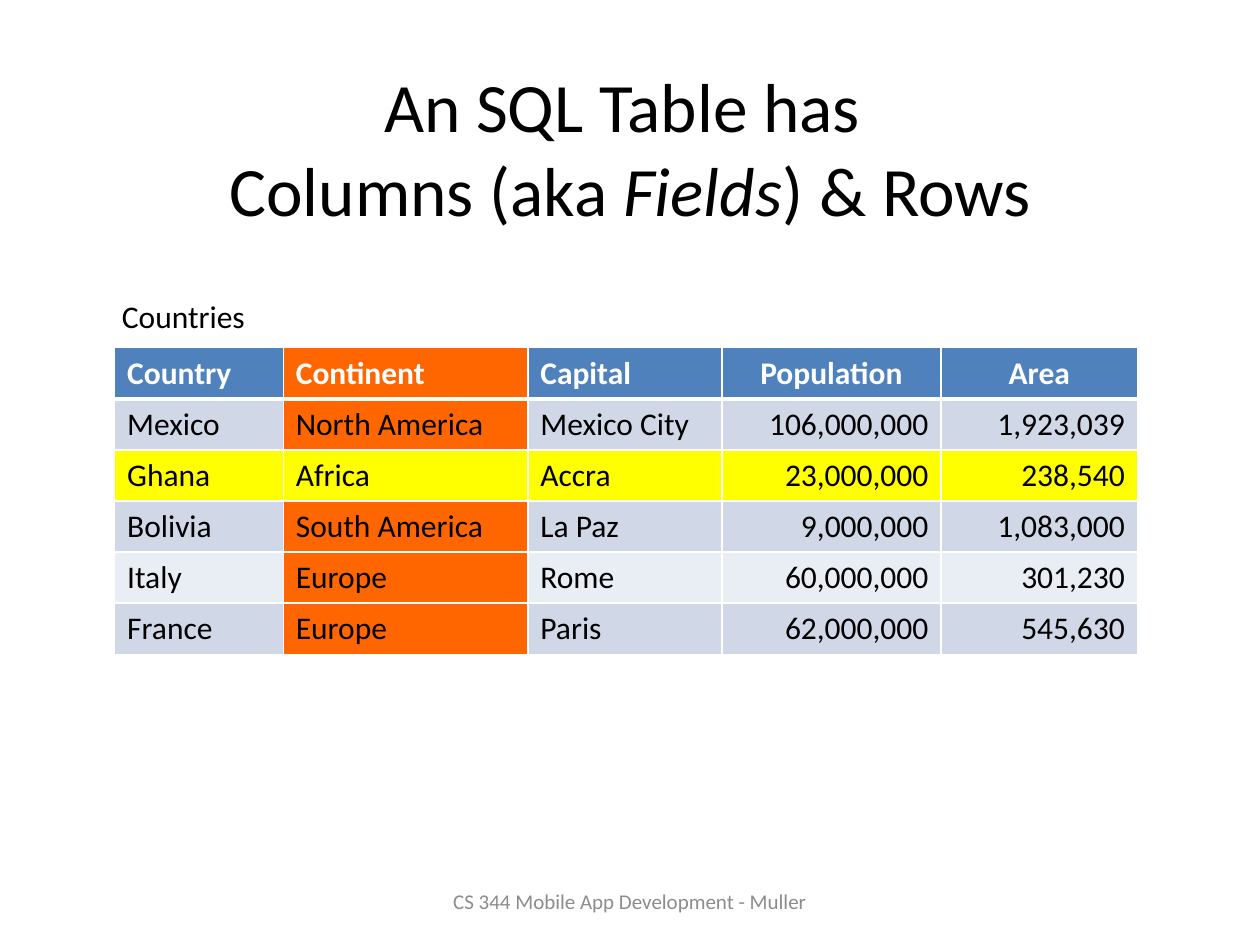
from lxml.etree import SubElement
from pptx import Presentation
from pptx.dml.color import RGBColor
from pptx.enum.text import MSO_ANCHOR, PP_ALIGN
from pptx.oxml.ns import qn
from pptx.util import Cm, Pt

BLACK = RGBColor(0x00, 0x00, 0x00)
WHITE = RGBColor(0xFF, 0xFF, 0xFF)
GREY = RGBColor(0x8C, 0x8C, 0x8C)
BLUE = RGBColor(0x4F, 0x81, 0xBD)
ORANGE = RGBColor(0xFF, 0x66, 0x00)
YELLOW = RGBColor(0xFF, 0xFF, 0x00)
DARK = RGBColor(0xD0, 0xD8, 0xE8)
LIGHT = RGBColor(0xE9, 0xED, 0xF4)

LEFT, MID, RIGHT = PP_ALIGN.LEFT, PP_ALIGN.CENTER, PP_ALIGN.RIGHT
FIELD, RECORD = 1, 2
WIDTHS = (3.4, 4.93, 3.91, 4.42, 3.96)
ROWS = (
    ("Country", "Continent", "Capital", "Population", "Area"),
    ("Mexico", "North America", "Mexico City", "106,000,000", "1,923,039"),
    ("Ghana", "Africa", "Accra", "23,000,000", "238,540"),
    ("Bolivia", "South America", "La Paz", "9,000,000", "1,083,000"),
    ("Italy", "Europe", "Rome", "60,000,000", "301,230"),
    ("France", "Europe", "Paris", "62,000,000", "545,630"),
)


def write(para, text, size=18, color=BLACK, bold=False, italic=False, align=LEFT):
    """Add text to a paragraph, with a line break at each newline."""
    para.alignment = align
    for i, line in enumerate(text.split("\n")):
        if i:
            para.add_line_break()
        run = para.add_run()
        run.text = line
        font = run.font
        font.name, font.size, font.color.rgb = "Calibri", Pt(size), color
        font.bold, font.italic = bold, italic


def add_box(slide, box, wrap=True, anchor=MSO_ANCHOR.MIDDLE):
    """Add a text box and return its first paragraph."""
    frame = slide.shapes.add_textbox(*map(Cm, box)).text_frame
    frame.word_wrap, frame.vertical_anchor = wrap, anchor
    return frame.paragraphs[0]


def add_title(slide, box):
    """Place the two-line title."""
    para = add_box(slide, box)
    style = {"size": 39.6, "align": MID}
    write(para, "An SQL Table has \nColumns (aka ", **style)
    write(para, "Fields", italic=True, **style)
    write(para, ") & Rows", **style)


def add_edge(cell, side, width):
    """Draw one white border of a cell."""
    line = SubElement(cell._tc.get_or_add_tcPr(), qn(f"a:ln{side}"), w=str(Pt(width)))
    fill = SubElement(line, qn("a:solidFill"))
    SubElement(fill, qn("a:srgbClr"), val=str(WHITE))


def pick_fill(row, col):
    """Choose a cell colour from its row and column."""
    if row == RECORD:
        return YELLOW
    if col == FIELD:
        return ORANGE
    if row == 0:
        return BLUE
    return DARK if row % 2 else LIGHT


def add_grid(slide, box):
    """Place the table of countries with its caption above it."""
    left, top, width, height = box
    shape = slide.shapes.add_table(len(ROWS), len(WIDTHS), *map(Cm, box))
    table = shape.table
    for col, size in zip(table.columns, WIDTHS):
        col.width = Cm(size)
    for r, row in enumerate(ROWS):
        table.rows[r].height = Cm(height / len(ROWS))
        for c, text in enumerate(row):
            cell = table.cell(r, c)
            for side in "LRTB":
                thick = (r, side) in ((0, "B"), (1, "T"))
                add_edge(cell, side, 3 if thick else 1)
            cell.fill.solid()
            cell.fill.fore_color.rgb = pick_fill(r, c)
            head = r == 0
            align = LEFT if c < 3 else MID if head else RIGHT
            write(cell.text_frame.paragraphs[0], text, bold=head,
                  color=WHITE if head else BLACK, align=align)
    label = (left - 0.1, top - 1.14, 3.02, 1.02)
    write(add_box(slide, label, wrap=False, anchor=MSO_ANCHOR.TOP), "Countries")


def add_footer(slide, box):
    """Place the course line at the foot."""
    write(add_box(slide, box), "CS 344 Mobile App Development - Muller",
          size=12, color=GREY, align=MID)


def main():
    """Build and save the slide."""
    deck = Presentation()
    deck.slide_width, deck.slide_height = Cm(25.4), Cm(19.05)
    slide = deck.slides.add_slide(deck.slide_layouts[6])
    add_title(slide, (1.27, 1.37, 22.86, 3.18))
    add_footer(slide, (8.68, 17.66, 8.04, 1.01))
    add_grid(slide, (2.31, 7.01, sum(WIDTHS), 6.18))
    deck.save("out.pptx")


if __name__ == "__main__":
    main()
